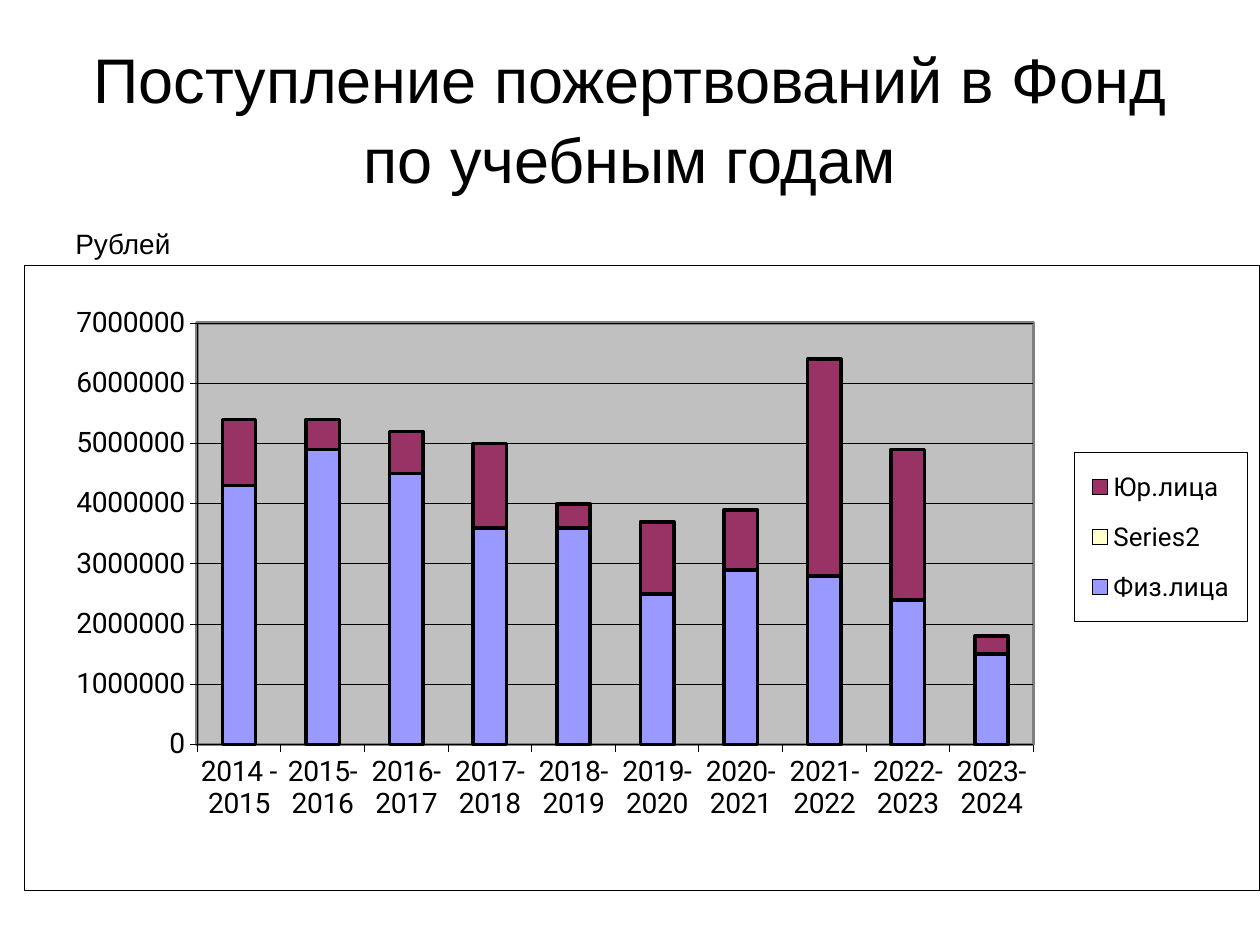
from pptx import Presentation
from pptx import util as u
from pptx.chart import data as chart_data
from pptx.dml import color
from pptx.enum import chart as ch, text
from pptx.oxml import parse_xml
from pptx.oxml import ns

YEARS = ["2014 - 2015"] + [f"{year}-{year + 1}" for year in range(2015, 2024)]
DONATIONS = {
    "Физ.лица": ("9999FF", [4300000, 4900000, 4500000, 3600000, 3600000,
                            2500000, 2900000, 2800000, 2400000, 1500000]),
    "Series2": ("FFFFCC", [None] * len(YEARS)),
    "Юр.лица": ("993366", [1100000, 500000, 700000, 1400000, 400000,
                           1200000, 1000000, 3600000, 2500000, 300000]),
}


def rgb(value):
    return color.RGBColor.from_string(value)


def apply(target, values):
    for name, value in values.items():
        setattr(target, name, value)


def area_format(fill, line, width):
    return parse_xml(
        f'<c:spPr {ns.nsdecls("c", "a")}><a:solidFill><a:srgbClr val="{fill}"/></a:solidFill>'
        f'<a:ln w="{u.Pt(width)}"><a:solidFill><a:srgbClr val="{line}"/></a:solidFill></a:ln></c:spPr>')


def manual_layout(x, y, w, h, inner=False):
    target = '<c:layoutTarget val="inner"/>' if inner else ""
    sizes = "".join(f'<c:{key} val="{value}"/>' for key, value in zip("xywh", (x, y, w, h)))
    return parse_xml(
        f'<c:layout {ns.nsdecls("c")}><c:manualLayout>{target}<c:xMode val="edge"/>'
        f'<c:yMode val="edge"/>{sizes}</c:manualLayout></c:layout>')


class DonationSlide:
    """Holds the style and the slide being built."""

    ink = "000000"
    text_font = "Arial"
    chart_font = "Roboto"

    def __init__(self, slide):
        self.slide = slide

    def style_font(self, font, name, size):
        apply(font, {"name": name, "size": u.Pt(size), "bold": False})
        font.color.rgb = rgb(self.ink)

    def style_line(self, line, width):
        line.color.rgb = rgb(self.ink)
        line.width = u.Pt(width)

    def add_text(self, wording, box, size, paragraph_format, anchor=text.MSO_ANCHOR.TOP):
        frame = self.slide.shapes.add_textbox(*map(u.Inches, box)).text_frame
        apply(frame, {"word_wrap": True, "vertical_anchor": anchor})
        paragraph = frame.paragraphs[0]
        apply(paragraph, paragraph_format)
        run = paragraph.add_run()
        run.text = wording
        self.style_font(run.font, self.text_font, size)

    def add_stacked_chart(self, categories, donations, box):
        table = chart_data.CategoryChartData(number_format="0")
        table.categories = categories
        for donor, (_, sums) in donations.items():
            table.add_series(donor, sums)
        chart = self.slide.shapes.add_chart(
            ch.XL_CHART_TYPE.COLUMN_STACKED, *map(u.Inches, box), table).chart
        apply(chart, {"has_title": False, "has_legend": True})
        self.style_font(chart.font, self.chart_font, 16.1)

        columns = chart.plots[0]
        apply(columns, {"gap_width": 150, "overlap": 100, "vary_by_categories": False})
        for series, (fill, _) in zip(columns.series, donations.values()):
            series.format.fill.solid()
            series.format.fill.fore_color.rgb = rgb(fill)
            self.style_line(series.format.line, 2)

        for axis in (chart.category_axis, chart.value_axis):
            apply(axis, {"major_tick_mark": ch.XL_TICK_MARK.OUTSIDE,
                         "minor_tick_mark": ch.XL_TICK_MARK.NONE})
            self.style_line(axis.format.line, 0.5)
            self.style_font(axis.tick_labels.font, self.chart_font, 16.1)
        apply(chart.value_axis, {"minimum_scale": 0, "maximum_scale": 7000000,
                                 "major_unit": 1000000, "has_major_gridlines": True})
        self.style_line(chart.value_axis.major_gridlines.format.line, 0.5)
        self.style_legend(chart.legend)
        self.style_areas(chart)

    def style_legend(self, legend):
        apply(legend, {"position": ch.XL_LEGEND_POSITION.RIGHT, "include_in_layout": False})
        self.style_font(legend.font, self.chart_font, 14.8)
        root = legend._element
        for layout in root.findall(ns.qn("c:layout")):
            root.remove(layout)
        root.find(ns.qn("c:legendPos")).addnext(manual_layout(0.85, 0.3, 0.14, 0.27))
        root.find(ns.qn("c:txPr")).addprevious(area_format("FFFFFF", self.ink, 0.5))

    def style_areas(self, chart):
        root = chart._chartSpace
        root.find(ns.qn("c:txPr")).addprevious(area_format("FFFFFF", self.ink, 0.5))
        plot_area = root.chart.plotArea
        for layout in plot_area.findall(ns.qn("c:layout")):
            plot_area.remove(layout)
        plot_area.insert(0, manual_layout(0.14, 0.093, 0.677, 0.674, inner=True))
        plot_area.append(area_format("C0C0C0", "808080", 2))


def main():
    deck = Presentation()
    apply(deck, {"slide_width": u.Inches(10), "slide_height": u.Inches(7.5)})
    page = DonationSlide(deck.slides.add_slide(deck.slide_layouts[6]))
    page.add_text("Поступление пожертвований в Фонд по учебным годам", (0.5, 0.3, 9, 1.25), 36,
                  {"alignment": text.PP_ALIGN.CENTER, "line_spacing": 1.05},
                  text.MSO_ANCHOR.MIDDLE)
    page.add_text("Рублей", (0.5, 1.75, 4.42, 0.35), 16, {"space_before": u.Pt(3.2)})
    page.add_stacked_chart(YEARS, DONATIONS, (0.19, 2.1, 9.81, 4.97))
    deck.save("out.pptx")


if __name__ == "__main__":
    main()
